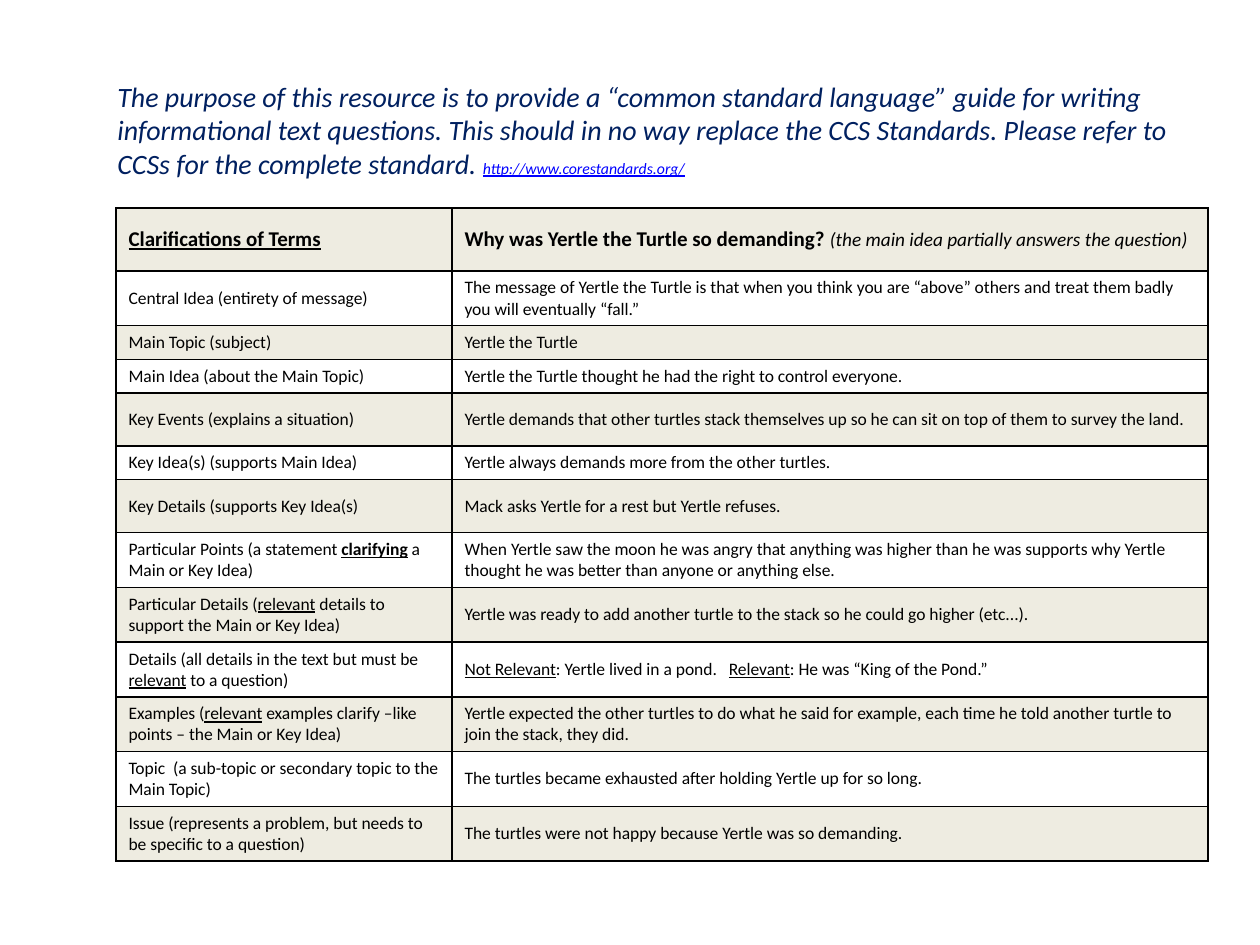
from lxml.etree import SubElement
from pptx import Presentation
from pptx.dml.color import RGBColor
from pptx.enum.text import MSO_ANCHOR
from pptx.oxml.ns import qn
from pptx.util import Pt

SCALE = 914400 / 126
BLACK, NAVY, BLUE, CREAM = "000000", "002060", "0000FF", "EEECE1"
UNDERLINED = {"underline": True}
HEADER = {"size": Pt(12), "bold": True}

COLUMN_WIDTHS = [336, 756]
HEADER_HEIGHT, DOUBLE, SPACED, SINGLE = 63, 54, 53, 33

INTRODUCTION = [
    ("The purpose of this resource is to provide a “common standard language” guide for writing "
     "informational text questions. This should in no way replace the CCS Standards. Please refer "
     "to CCSs for the complete standard. ", {"color": NAVY}),
    ("http://www.corestandards.org/", {"size": Pt(9), "color": BLUE, "underline": True}),
]

ROWS = [
    (HEADER_HEIGHT, [("Clarifications of Terms", HEADER | UNDERLINED)],
     [("Why was Yertle the Turtle so demanding? ", HEADER),
      ("(the main idea partially answers the question)", {"size": Pt(11), "italic": True})]),
    (DOUBLE, "Central Idea (entirety of message)",
     "The message of Yertle the Turtle is that when you think you are “above” others "
     "and treat them badly you will eventually “fall.”"),
    (SINGLE, "Main Topic (subject)", "Yertle the Turtle"),
    (SINGLE, "Main Idea (about the Main Topic)",
     "Yertle the Turtle thought he had the right to control everyone."),
    (SPACED, "Key Events (explains a situation)",
     "Yertle demands that other turtles stack themselves up so he can sit on top of them "
     "to survey the land."),
    (SINGLE, "Key Idea(s) (supports Main Idea)",
     "Yertle always demands more from the other turtles."),
    (SPACED, "Key Details (supports Key Idea(s)",
     "Mack asks Yertle for a rest but Yertle refuses."),
    (DOUBLE, [("Particular Points (a statement ", {}),
              ("clarifying", UNDERLINED | {"bold": True}),
              (" a Main or Key Idea)", {})],
     "When Yertle saw the moon he was angry that anything was higher than he was supports why "
     "Yertle thought he was better than anyone or anything else."),
    (DOUBLE, [("Particular Details (", {}), ("relevant", UNDERLINED),
              (" details to support the Main or Key Idea)", {})],
     "Yertle was ready to add another turtle to the stack so he could go higher (etc...)."),
    (DOUBLE, [("Details (all details in the text but must be ", {}), ("relevant", UNDERLINED),
              (" to a question)", {})],
     [("Not Relevant", UNDERLINED), (": Yertle lived in a pond.   ", {}),
      ("Relevant", UNDERLINED), (": He was “King of the Pond.”", {})]),
    (DOUBLE, [("Examples (", {}), ("relevant", UNDERLINED),
              (" examples clarify –like points – the Main or Key Idea)", {})],
     "Yertle expected the other turtles to do what he said for example, each time he told "
     "another turtle to join the stack, they did."),
    (DOUBLE, "Topic  (a sub-topic or secondary topic to the Main Topic)",
     "The turtles became exhausted after holding Yertle up for so long."),
    (DOUBLE, "Issue (represents a problem, but needs to be specific to a question)",
     "The turtles were not happy because Yertle was so demanding."),
]


def px(length):
    return round(length * SCALE)


def set_color(color_format, value):
    color_format.rgb = RGBColor.from_string(value)


def add_runs(paragraph, content, defaults):
    runs = [(content, {})] if isinstance(content, str) else content
    for text, changes in runs:
        run = paragraph.add_run()
        run.text = text
        values = {"name": "Calibri", "color": BLACK} | defaults | changes
        set_color(run.font.color, values.pop("color"))
        for name, value in values.items():
            setattr(run.font, name, value)


def add_borders(cell):
    properties = cell._tc.get_or_add_tcPr()
    for index, side in enumerate(("lnL", "lnR", "lnT", "lnB")):
        line = SubElement(properties, qn(f"a:{side}"), w=str(Pt(1)))
        fill = SubElement(line, qn("a:solidFill"))
        SubElement(fill, qn("a:srgbClr"), val=BLACK)
        properties.insert(index, line)


def add_introduction(slide, left, top, width, height):
    shape = slide.shapes.add_textbox(px(left), px(top), px(width), px(height))
    shape.text_frame.word_wrap = True
    add_runs(shape.text_frame.paragraphs[0], INTRODUCTION, {"size": Pt(16), "italic": True})


def add_terms_table(slide, left, top):
    width = sum(COLUMN_WIDTHS)
    height = sum(row_height for row_height, *_ in ROWS)
    table = slide.shapes.add_table(
        len(ROWS), len(COLUMN_WIDTHS), px(left), px(top), px(width), px(height)).table
    table.first_row = table.horz_banding = False
    for column, column_width in zip(table.columns, COLUMN_WIDTHS):
        column.width = px(column_width)
    for row_index, (row_height, *contents) in enumerate(ROWS):
        table.rows[row_index].height = px(row_height)
        for cell, content in zip(table.rows[row_index].cells, contents):
            cell.vertical_anchor = MSO_ANCHOR.MIDDLE
            add_runs(cell.text_frame.paragraphs[0], content, {"size": Pt(10)})
            if row_index % 2 == 0:
                cell.fill.solid()
                set_color(cell.fill.fore_color, CREAM)
            else:
                cell.fill.background()
            add_borders(cell)


def main():
    presentation = Presentation()
    presentation.slide_width, presentation.slide_height = px(1260), px(945)
    slide = presentation.slides.add_slide(presentation.slide_layouts[6])
    add_introduction(slide, 105, 73, 1113, 149)
    add_terms_table(slide, 116, 208)
    presentation.save("out.pptx")


if __name__ == "__main__":
    main()
